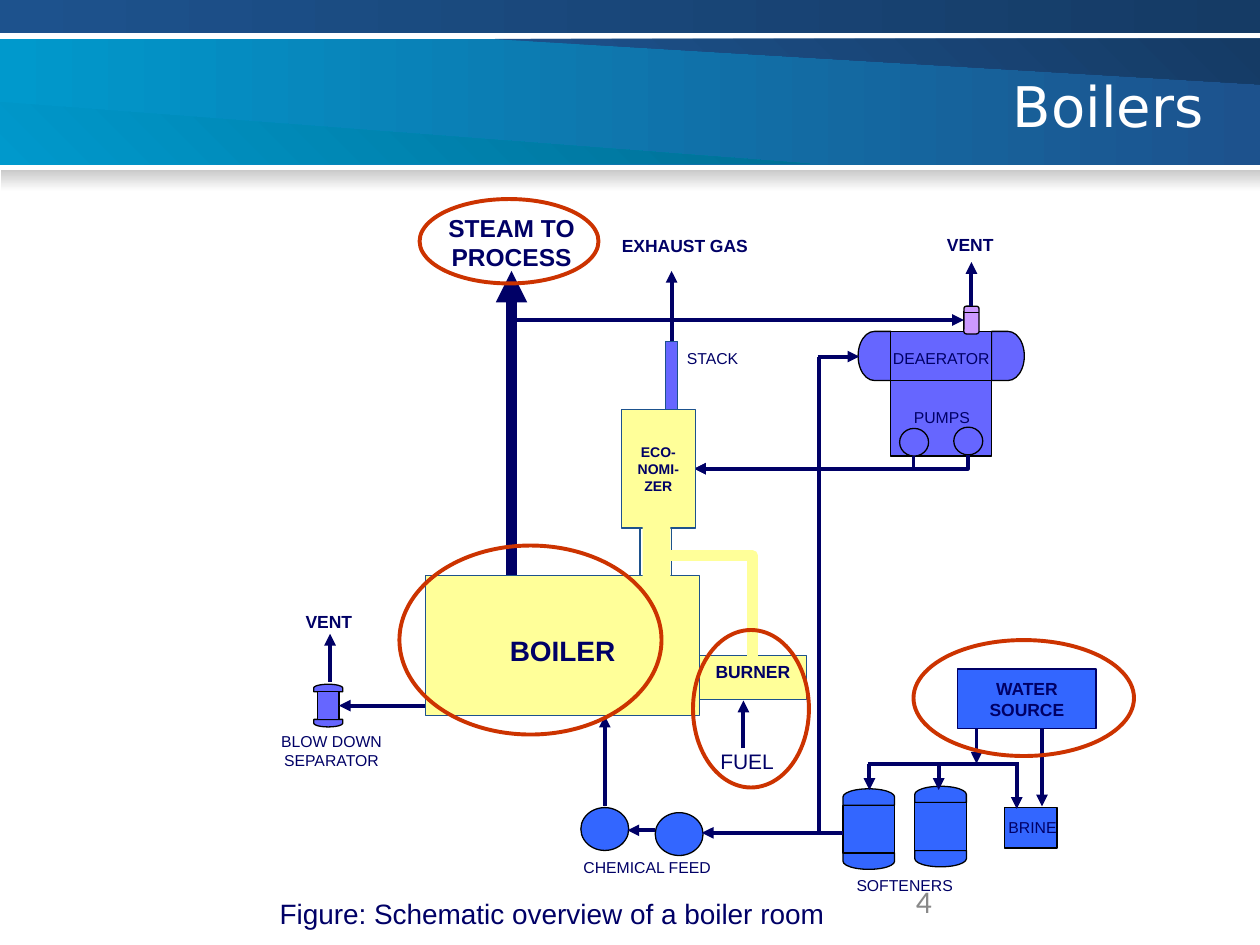
import pptx
import pptx.dml.color
import pptx.enum.shapes
import pptx.enum.text
import pptx.oxml
import pptx.oxml.ns
import pptx.util

Inches = pptx.util.Inches
Pt = pptx.util.Pt
color = pptx.dml.color.RGBColor.from_string
SHAPE = pptx.enum.shapes.MSO_SHAPE
CONNECTOR = pptx.enum.shapes.MSO_CONNECTOR
ALIGN = pptx.enum.text.PP_ALIGN
ANCHOR = pptx.enum.text.MSO_ANCHOR
qn = pptx.oxml.ns.qn

NAVY, BLUE, VIOLET, YELLOW = "000066", "3366FF", "6666FF", "FFFF99"
BLACK, EDGE = "000000", "1D528D"


def format_shape(shape, fill=None, line=None, width=0.75, angle=0):
    """Fill with a hex colour, or with a gradient between a pair of them."""
    shape.shadow.inherit = False
    if fill is None:
        shape.fill.background()
    elif isinstance(fill, tuple):
        shape.fill.gradient()
        shape.fill.gradient_angle = angle
        for stop, value in zip(shape.fill.gradient_stops, fill):
            stop.color.rgb = color(value)
    else:
        shape.fill.solid()
        shape.fill.fore_color.rgb = color(fill)
    if line is None:
        shape.line.fill.background()
    else:
        shape.line.color.rgb = color(line)
        shape.line.width = Pt(width)
    return shape


def write_text(shape, text, size, bold=False, align=ALIGN.CENTER,
               anchor=ANCHOR.TOP, font_name="Arial", font_color=NAVY):
    frame = shape.text_frame
    frame.word_wrap = True
    frame.vertical_anchor = anchor
    paragraph = frame.paragraphs[0]
    paragraph.text = text
    paragraph.alignment = align
    font_values = {"name": font_name, "size": Pt(size), "bold": bold}
    for name, value in font_values.items():
        setattr(paragraph.font, name, value)
    paragraph.font.color.rgb = color(font_color)


presentation = pptx.Presentation()
presentation.slide_width = Inches(10)
presentation.slide_height = Inches(7.5)
slide = presentation.slides.add_slide(presentation.slide_layouts[6])
shapes = slide.shapes

# Header bands and their slanted accents
for box, gradient, angle in [
    ((0, 0.31, 10, 1), ("0099CC", "1D528D"), 0),
    ((0, 0, 10, 0.26), ("1D528D", "153B65"), 0),
    ((0.01, 1.35, 9.99, 0.17), ("CACACA", "FFFFFF"), 270),
]:
    band = shapes.add_shape(SHAPE.RECTANGLE, *map(Inches, box))
    format_shape(band, gradient, angle=angle)

for corners, gradient in [
    ([(3.93, 0.31), (10, 0.67), (10, 0.31)], ("1D528D", "153B65")),
    ([(0, 0.81), (6.43, 1.3), (0, 1.3)], ("0099CC", "006D92")),
]:
    points = [(Inches(x), Inches(y)) for x, y in corners]
    builder = shapes.build_freeform(*points[0])
    builder.add_line_segments(points[1:])
    format_shape(builder.convert_to_shape(), gradient, angle=45)

# Equipment
equipment = {}
for name, kind, box, fill, line in [
    ("stack", SHAPE.RECTANGLE, (5.28, 2.71, 0.1, 0.6), VIOLET, EDGE),
    ("burner", SHAPE.RECTANGLE, (5.55, 5.2, 0.85, 0.35), YELLOW, EDGE),
    ("deaerator right", SHAPE.FLOWCHART_DELAY, (7.87, 2.63, 0.26, 0.39), VIOLET, BLACK),
    ("deaerator left", SHAPE.FLOWCHART_DELAY, (6.81, 2.63, 0.26, 0.39), VIOLET, BLACK),
    ("deaerator", SHAPE.RECTANGLE, (7.07, 2.63, 0.8, 0.39), VIOLET, BLACK),
    ("pump housing", SHAPE.RECTANGLE, (7.07, 3.02, 0.8, 0.6), VIOLET, BLACK),
    ("left pump", SHAPE.OVAL, (7.14, 3.4, 0.23, 0.22), VIOLET, BLACK),
    ("right pump", SHAPE.OVAL, (7.57, 3.39, 0.23, 0.22), VIOLET, BLACK),
    ("feed pump", SHAPE.OVAL, (5.2, 6.45, 0.38, 0.34), BLUE, BLACK),
    ("chemical pump", SHAPE.OVAL, (4.61, 6.41, 0.38, 0.34), BLUE, BLACK),
    ("brine", SHAPE.RECTANGLE, (7.97, 6.41, 0.42, 0.32), BLUE, BLACK),
    ("water source", SHAPE.RECTANGLE, (7.6, 5.31, 1.1, 0.47), BLUE, NAVY),
    ("vent stub", SHAPE.ROUNDED_RECTANGLE, (7.65, 2.43, 0.12, 0.22), "CC99FF", BLACK),
]:
    shape = shapes.add_shape(kind, *map(Inches, box))
    equipment[name] = format_shape(shape, fill, line)
equipment["deaerator left"].rotation = 180
write_text(equipment["burner"], "BURNER", 10, True)
write_text(equipment["water source"], "WATER SOURCE", 10, True, anchor=ANCHOR.MIDDLE)

# Tanks: a body between two rounded caps
for name, (left, top, width, height), depth, span, fill in [
    ("left softener", (6.69, 6.39, 0.41, 0.38), 0.13, 0.41, BLUE),
    ("right softener", (7.26, 6.37, 0.41, 0.38), 0.13, 0.41, BLUE),
    ("separator", (2.52, 5.49, 0.17, 0.22), 0.06, 0.23, VIOLET),
]:
    cap_left = left + width / 2 - depth / 2
    for middle, rotation in [(top - depth / 2, 270), (top + height + depth / 2, 90)]:
        cap = shapes.add_shape(SHAPE.FLOWCHART_DELAY, Inches(cap_left),
                               Inches(middle - span / 2), Inches(depth), Inches(span))
        cap.rotation = rotation
        format_shape(cap, fill, BLACK)
    body = shapes.add_shape(SHAPE.RECTANGLE, *map(Inches, (left, top, width, height)))
    equipment[name] = format_shape(body, fill, BLACK)

# Boiler, economizer and the duct between them are drawn over the pipes
pipes = [
    # start, end, width, colour, arrow
    ((4.06, 4.71), (4.06, 2.15), 6, NAVY, True),
    ((4.06, 2.54), (7.65, 2.54), 2.25, NAVY, True),
    ((6.89, 6.06), (8.09, 6.06), 2.25, NAVY, False),
    ((6.9, 6.06), (6.9, 6.27), 2.25, NAVY, True),
    ((7.45, 6.06), (7.45, 6.27), 2.25, NAVY, True),
    ((8.07, 6.06), (8.07, 6.42), 2.25, NAVY, True),
    ((7.75, 5.78), (7.75, 6.06), 2.25, NAVY, True),
    ((8.27, 5.78), (8.27, 6.4), 2.25, NAVY, True),
    ((6.69, 6.61), (5.57, 6.61), 2.25, NAVY, True),
    ((5.2, 6.59), (4.98, 6.59), 2.25, NAVY, True),
    ((4.8, 6.4), (4.8, 5.68), 2.25, NAVY, True),
    ((5.9, 5.94), (5.9, 5.56), 2.25, NAVY, True),
    ((3.38, 5.6), (2.69, 5.6), 2.25, NAVY, True),
    ((2.62, 5.41), (2.62, 5.03), 2.25, NAVY, True),
    ((5.33, 2.71), (5.33, 2.15), 2.25, NAVY, True),
    ((6.5, 6.6), (6.5, 2.83), 2.25, NAVY, False),
    ((6.49, 2.83), (6.82, 2.83), 2.25, NAVY, True),
    ((7.71, 2.43), (7.71, 2.08), 2.25, NAVY, True),
    ((7.65, 2.48), (7.77, 2.48), 0.75, BLACK, False),
]
elbows = [
    # box before rotation, preset, mirrored, adjustment, colour, width, arrow
    ((5.09, 4.32, 1.01, 0.76), "bentConnector3", True, 78700, YELLOW, 6, False),
    ((6.33, 2.8, 0.1, 1.74), "bentConnector2", False, None, NAVY, 2.25, True),
    ((6.54, 2.58, 0.11, 2.17), "bentConnector2", False, None, NAVY, 2.25, True),
]
duct_edges = [((x, 4.17), (x, 4.57), 0.75, EDGE, False) for x in (5.08, 5.33)]
joints = {
    (5.33, 2.71): (equipment["stack"], 0),
    (7.71, 2.43): (equipment["vent stub"], 0),
    (7.65, 2.54): (equipment["vent stub"], 1),
    (2.69, 5.6): (equipment["separator"], 3),
}

connectors = []
for start, end, width, line, arrow in pipes + duct_edges:
    connector = shapes.add_connector(CONNECTOR.STRAIGHT, *map(Inches, start + end))
    if start in joints:
        connector.begin_connect(*joints[start])
    if end in joints:
        connector.end_connect(*joints[end])
    connectors.append((connector, width, line, arrow))

for (left, top, width, height), preset, mirrored, bend, line, weight, arrow in elbows:
    connector = shapes.add_connector(CONNECTOR.ELBOW, Inches(left), Inches(top),
                                     Inches(left + width), Inches(top + height))
    properties = connector._element.spPr
    transform = properties.find(qn("a:xfrm"))
    transform.set("rot", str(90 * 60000))
    if mirrored:
        transform.set("flipH", "1")
    geometry = properties.find(qn("a:prstGeom"))
    geometry.set("prst", preset)
    if bend:
        guide = pptx.oxml.parse_xml(
            '<a:gd xmlns:a="http://schemas.openxmlformats.org/drawingml/2006/main" '
            f'name="adj1" fmla="val {bend}"/>')
        geometry.find(qn("a:avLst")).append(guide)
    connectors.append((connector, weight, line, arrow))

for connector, width, line, arrow in connectors:
    connector.line.color.rgb = color(line)
    connector.line.width = Pt(width)
    properties = connector._element.spPr
    if arrow:
        outline = properties.find(qn("a:ln"))
        outline.append(outline.makeelement(qn("a:tailEnd"), {"type": "triangle"}))
    properties.append(properties.makeelement(qn("a:effectLst"), {}))

for text, box, fill_line in [
    ("BOILER", (3.38, 4.57, 2.17, 1.11), EDGE),
    ("ECO-NOMI-ZER", (4.93, 3.25, 0.59, 0.94), EDGE),
    ("", (5.1, 4.18, 0.22, 0.43), None),
]:
    shape = shapes.add_shape(SHAPE.RECTANGLE, *map(Inches, box))
    format_shape(shape, YELLOW, fill_line)
    if text:
        is_boiler = text == "BOILER"
        write_text(shape, text, 16 if is_boiler else 8, True, anchor=ANCHOR.MIDDLE)
        if is_boiler:
            shape.text_frame.margin_top = Inches(0.12)

# Labels
for text, box, size, bold in [
    ("BRINE", (7.86, 6.44, 0.67, 0.25), 9, False),
    ("SOFTENERS", (6.68, 6.9, 1, 0.22), 9, False),
    ("CHEMICAL FEED", (4.44, 6.76, 1.39, 0.23), 9, False),
    ("FUEL", (5.55, 5.89, 0.76, 0.32), 12, False),
    ("BLOW DOWN SEPARATOR", (2.07, 5.76, 1.12, 0.42), 9, False),
    ("VENT", (2.31, 4.8, 0.6, 0.24), 10, True),
    ("VENT", (7.4, 1.81, 0.6, 0.23), 10, True),
    ("EXHAUST GAS", (4.78, 1.82, 1.31, 0.34), 10, True),
    ("STEAM TO PROCESS", (3.4, 1.64, 1.32, 0.57), 14, True),
    ("STACK", (5.25, 2.72, 0.81, 0.26), 9, False),
    ("DEAERATOR", (6.85, 2.72, 1.24, 0.22), 9, False),
    ("PUMPS", (7.03, 3.19, 0.89, 0.22), 9, False),
]:
    write_text(shapes.add_textbox(*map(Inches, box)), text, size, bold)

# Rings around the main inputs and outputs
for box in [(7.25, 5.08, 1.75, 0.92), (3.17, 4.33, 2.08, 1.5),
            (5.5, 5, 0.92, 1.25), (3.33, 1.58, 1.42, 0.67)]:
    ring = shapes.add_shape(SHAPE.OVAL, *map(Inches, box))
    format_shape(ring, None, "CC3300", 2.25)

# Title, caption and page number
for text, box, size, values in [
    ("Boilers", (1.3, 0.44, 8.35, 0.79), 32,
     {"align": ALIGN.RIGHT, "anchor": ANCHOR.MIDDLE,
      "font_name": "DejaVu Sans", "font_color": "FFFFFF"}),
    ("Figure: Schematic overview of a boiler room", (2.12, 7.07, 4.95, 0.37), 16,
     {"align": ALIGN.LEFT}),
    ("4", (7.17, 6.95, 2.33, 0.4), 18,
     {"align": ALIGN.LEFT, "font_name": "Calibri", "font_color": "898989"}),
]:
    write_text(shapes.add_textbox(*map(Inches, box)), text, size, **values)

presentation.save("out.pptx")
